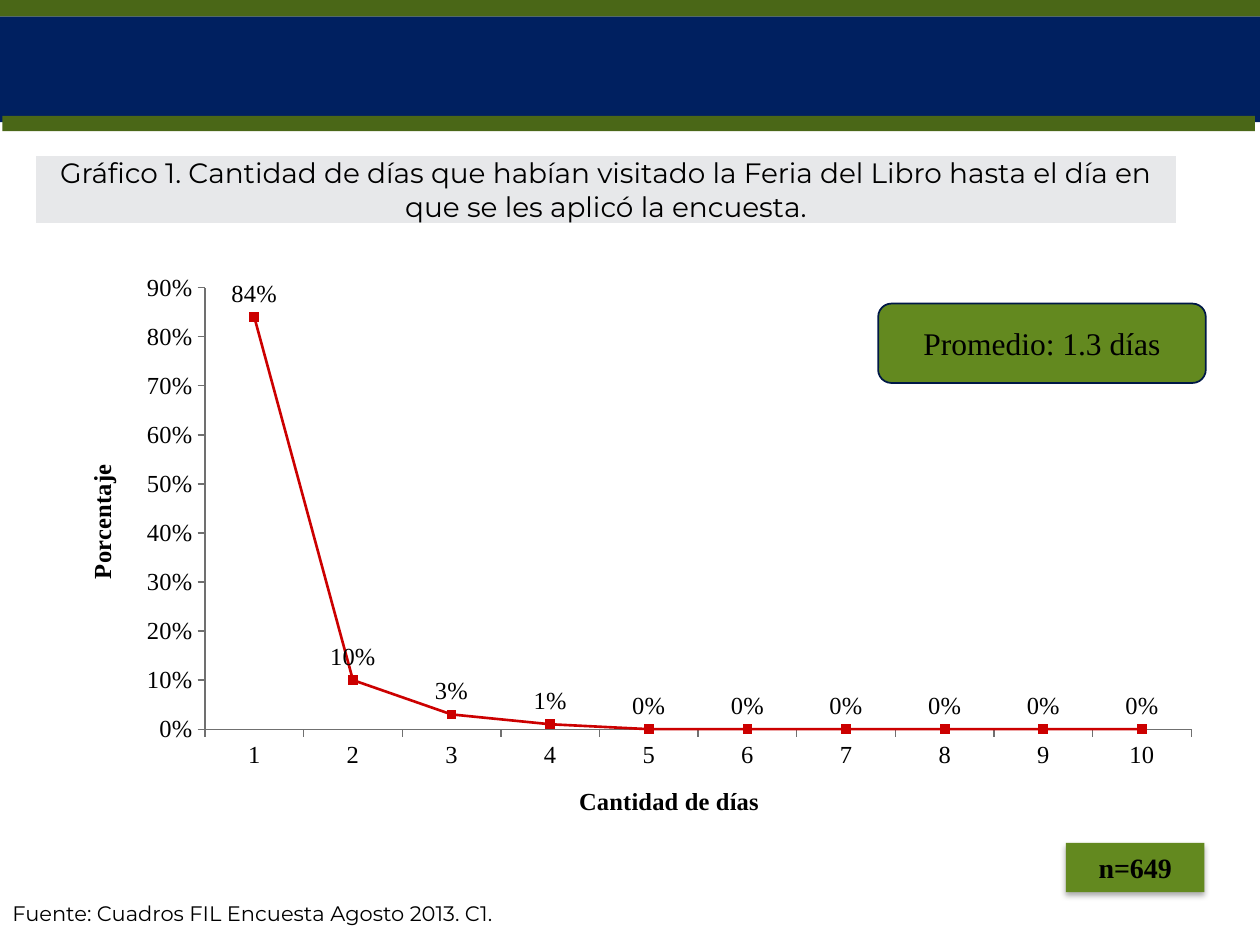
from lxml import etree
from pptx import Presentation
from pptx.chart.data import CategoryChartData
from pptx.dml.color import RGBColor
from pptx.enum.chart import XL_CHART_TYPE, XL_LABEL_POSITION, XL_MARKER_STYLE, XL_TICK_MARK
from pptx.enum.shapes import MSO_SHAPE
from pptx.enum.text import MSO_ANCHOR, PP_ALIGN
from pptx.oxml import parse_xml
from pptx.oxml.ns import nsdecls, qn
from pptx.util import Inches, Pt

RECT, ROUND = MSO_SHAPE.RECTANGLE, MSO_SHAPE.ROUNDED_RECTANGLE
LINE = XL_CHART_TYPE.LINE_MARKERS
ABOVE = XL_LABEL_POSITION.ABOVE
SQUARE = XL_MARKER_STYLE.SQUARE
OUTSIDE = XL_TICK_MARK.OUTSIDE
CENTER, MIDDLE = PP_ALIGN.CENTER, MSO_ANCHOR.MIDDLE
WIDE, HIGH = Inches(10), Inches(7.5)
SANS, SERIF = "Montserrat", "Times New Roman"
NAVY, MOSS, GREEN, RED = "002060", "4A6717", "63891F", "CC0000"
BLACK, GRAY, WHITE = "000000", "707070", "FFFFFF"


def color(code):
    return RGBColor.from_string(code)


def place(x, y, w, h):
    return [int(size * share / 100) for size, share in zip((WIDE, HIGH) * 2, (x, y, w, h))]


def style(font, face, size, bold=False):
    font.name, font.size, font.bold = face, Pt(size), bold
    font.color.rgb = color(BLACK)


def write(frame, text, face, size, bold=False, align=None):
    frame.text = text
    para = frame.paragraphs[0]
    para.alignment = align
    style(para.runs[0].font, face, size, bold)


def add_box(slide, spot, fill, kind=RECT, edge=None):
    box = slide.shapes.add_shape(kind, *place(*spot))
    box.shadow.inherit = False
    box.fill.solid()
    box.fill.fore_color.rgb = color(fill)
    if edge:
        box.line.color.rgb = color(edge)
        box.line.width = Pt(1)
    else:
        box.line.fill.background()
    return box


def add_label(slide, spot, text, size, bold=False, **look):
    box = add_box(slide, spot, GREEN, **look)
    box.text_frame.vertical_anchor = MIDDLE
    write(box.text_frame, text, SERIF, size, bold, CENTER)
    return box


def add_shade(box):
    effects = box._element.spPr.find(qn("a:effectLst"))
    shade = etree.SubElement(effects, qn("a:outerShdw"), blurRad=str(Pt(3.5)),
                             dist=str(Pt(2.2)), dir="5400000", rotWithShape="0")
    tint = etree.SubElement(shade, qn("a:srgbClr"), val=BLACK)
    etree.SubElement(tint, qn("a:alpha"), val="32000")


def add_banner(slide, spot, text):
    table = slide.shapes.add_table(1, 1, *place(*spot)).table
    table.first_row = table.horz_banding = False
    cell = table.cell(0, 0)
    cell.margin_left = cell.margin_right = cell.margin_top = Inches(0.01)
    cell.margin_bottom = 0
    cell.vertical_anchor = MIDDLE
    write(cell.text_frame, text, SANS, 16, align=CENTER)
    props = cell._tc.get_or_add_tcPr()
    for side in ("lnL", "lnR", "lnT", "lnB"):
        edge = etree.SubElement(props, qn(f"a:{side}"), w=str(Pt(1)))
        fill = etree.SubElement(edge, qn("a:solidFill"))
        etree.SubElement(fill, qn("a:srgbClr"), val=WHITE)
    cell.fill.solid()
    cell.fill.fore_color.rgb = color("E7E8EA")


def set_axis(axis, title):
    axis.has_major_gridlines = False
    axis.major_tick_mark = OUTSIDE
    axis.format.line.color.rgb = color(GRAY)
    write(axis.axis_title.text_frame, title, SERIF, 14, True)


def set_plot(chart, **shares):
    area = chart._chartSpace.chart.plotArea
    for old in area.findall(qn("c:layout")):
        area.remove(old)
    parts = "".join(f'<c:{key} val="{share}"/>' for key, share in shares.items())
    area.insert(0, parse_xml(
        f'<c:layout {nsdecls("c")}><c:manualLayout><c:layoutTarget val="inner"/>'
        f'<c:xMode val="edge"/><c:yMode val="edge"/>{parts}</c:manualLayout></c:layout>'))


def add_graph(slide, spot, values):
    data = CategoryChartData(number_format="0%")
    data.categories = [str(day) for day in range(1, len(values) + 1)]
    data.add_series("Series 1", values)
    chart = slide.shapes.add_chart(LINE, *place(*spot), data).chart
    chart.has_legend = chart.has_title = False
    style(chart.font, SERIF, 14)
    set_axis(chart.category_axis, "Cantidad de días")
    scale = chart.value_axis
    set_axis(scale, "Porcentaje")
    scale.minimum_scale, scale.maximum_scale, scale.major_unit = 0, 0.9, 0.1
    scale.tick_labels.number_format = "0%"
    scale.tick_labels.number_format_is_linked = False
    plot = chart.plots[0]
    plot.vary_by_categories = False
    line = plot.series[0]
    line.smooth = False
    line.format.line.color.rgb = color(RED)
    line.format.line.width = Pt(1.5)
    mark = line.marker
    mark.style, mark.size = SQUARE, 5
    mark.format.fill.solid()
    mark.format.fill.fore_color.rgb = color(RED)
    mark.format.line.color.rgb = color(RED)
    labels = line.data_labels
    labels.show_value, labels.position = True, ABOVE
    labels.number_format, labels.number_format_is_linked = "0%", False
    style(labels.font, SERIF, 14)
    set_plot(chart, x=0.13, y=0.04, w=0.85, h=0.76)


def add_note(slide, spot, text):
    box = slide.shapes.add_textbox(*place(*spot))
    box.text_frame.word_wrap = False
    write(box.text_frame, text, SANS, 12)


def main():
    deck = Presentation()
    deck.slide_width, deck.slide_height = WIDE, HIGH
    slide = deck.slides.add_slide(deck.slide_layouts[6])
    add_box(slide, (0, 1.73, 100, 11.2), NAVY)
    add_box(slide, (0, 0, 100, 1.73), MOSS)
    add_box(slide, (0.2, 12.27, 99.4, 1.6), MOSS)
    add_note(slide, (0, 94.67, 45.9, 4), "Fuente: Cuadros FIL Encuesta Agosto 2013. C1.")
    add_banner(slide, (2.8, 16.4, 90.6, 7.2),
               "Gráfico 1. Cantidad de días que habían visitado la Feria del Libro "
               "hasta el día en que se les aplicó la encuesta.")
    add_graph(slide, (4.3, 28, 92.1, 61.47), [0.84, 0.1, 0.03, 0.01] + [0] * 6)
    add_label(slide, (69.7, 32.13, 26, 8.4), "Promedio: 1.3 días", 18, kind=ROUND, edge="001847")
    add_shade(add_label(slide, (84.6, 89.2, 11, 5.2), "n=649", 16, True))
    deck.save("out.pptx")


if __name__ == "__main__":
    main()
